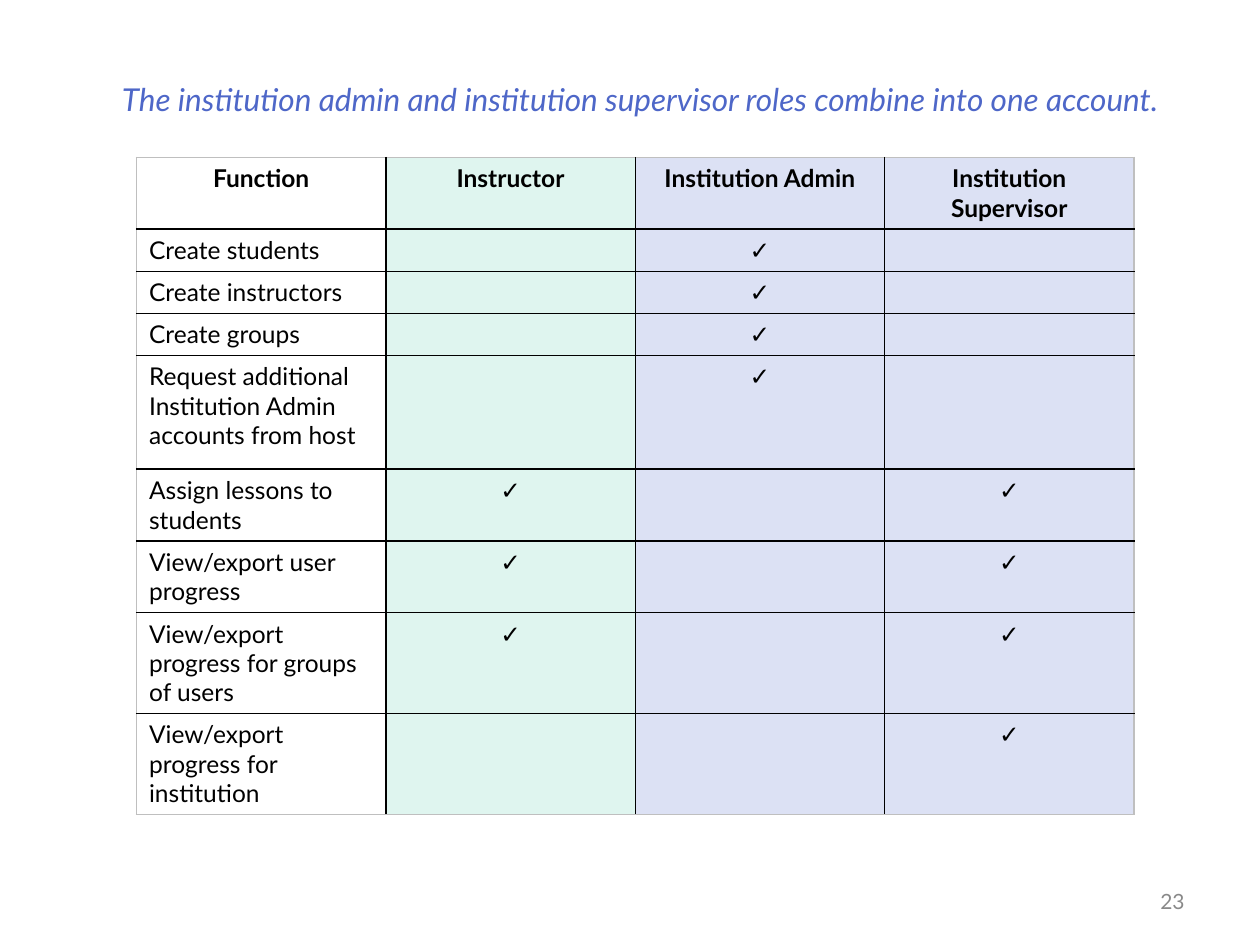
"""Build a slide with a table of account roles and what each may do."""
from dataclasses import dataclass

from lxml.etree import SubElement
from pptx import Presentation
from pptx.dml.color import RGBColor
from pptx.enum.text import MSO_ANCHOR, PP_ALIGN
from pptx.oxml.ns import qn
from pptx.util import Pt


@dataclass(frozen=True)
class Theme:
    font: str = "Lato"
    blue: str = "4E67C8"
    gray: str = "898989"
    edge: str = "BFBFBF"
    black: str = "000000"
    fills: tuple = ("FFFFFF", "DFF5EF", "DCE1F4", "DCE1F4")
    head: int = 18
    body: int = 14
    foot: int = 12


THEME = Theme()
TICK = "✓"
ROWS = [
    ("Function", "Instructor", "Institution Admin", "Institution Supervisor"),
    ("Create students", "", TICK, ""),
    ("Create instructors", "", TICK, ""),
    ("Create groups", "", TICK, ""),
    ("Request additional Institution Admin accounts from host", "", TICK, ""),
    ("Assign lessons to students", TICK, "", TICK),
    ("View/export user progress", TICK, "", TICK),
    ("View/export progress for groups of users", TICK, "", TICK),
    ("View/export progress for institution", "", "", TICK),
]
HEIGHTS = (41, 24, 24, 24, 65, 41, 41, 57.5, 57.5)
WIDTH = 142.5


def style(para, size, color, align, bold=False, italic=False):
    para.alignment = align
    for run in para.runs:
        font = run.font
        font.name, font.size = THEME.font, Pt(size)
        font.bold, font.italic = bold, italic
        font.color.rgb = RGBColor.from_string(color)


def add_label(slide, text, box, size, color, align, anchor, italic=False):
    frame = slide.shapes.add_textbox(*map(Pt, box)).text_frame
    frame.word_wrap = True
    frame.vertical_anchor = anchor
    frame.text = text
    style(frame.paragraphs[0], size, color, align, italic=italic)


def add_line(props, side, color):
    line = SubElement(props, qn(f"a:{side}"), w=str(Pt(1)))
    fill = SubElement(line, qn("a:solidFill"))
    SubElement(fill, qn("a:srgbClr"), val=color)


def fill_cell(cell, text, row, col):
    props = cell._tc.get_or_add_tcPr()
    outer = {"lnL": col == 0, "lnR": col == len(THEME.fills) - 1,
             "lnT": row == 0, "lnB": row == len(ROWS) - 1}
    for side, rim in outer.items():
        add_line(props, side, THEME.edge if rim else THEME.black)
    cell.fill.solid()
    cell.fill.fore_color.rgb = RGBColor.from_string(THEME.fills[col])
    para = cell.text_frame.paragraphs[0]
    if text:
        para.text = text
        align = PP_ALIGN.LEFT if row and not col else PP_ALIGN.CENTER
        style(para, THEME.body, THEME.black, align, bold=row == 0)
    else:
        SubElement(para._p, qn("a:endParaRPr"), sz=str(THEME.body * 100))


def add_grid(slide, left, top):
    cols = len(THEME.fills)
    table = slide.shapes.add_table(
        len(ROWS), cols, Pt(left), Pt(top),
        Pt(WIDTH * cols), Pt(sum(HEIGHTS))).table
    table.first_row = table.horz_banding = False
    for col in table.columns:
        col.width = Pt(WIDTH)
    for row, (texts, height) in enumerate(zip(ROWS, HEIGHTS)):
        table.rows[row].height = Pt(height)
        for col, text in enumerate(texts):
            fill_cell(table.cell(row, col), text, row, col)


def main():
    deck = Presentation()
    deck.slide_width, deck.slide_height = Pt(720), Pt(540)
    slide = deck.slides.add_slide(deck.slide_layouts[6])
    add_label(slide, "The institution admin and institution supervisor roles "
              "combine into one account.", (42, 42, 648, 24), THEME.head,
              THEME.blue, PP_ALIGN.CENTER, MSO_ANCHOR.TOP, italic=True)
    add_grid(slide, 78, 90)
    add_label(slide, "23", (516, 500.5, 168, 28.75), THEME.foot,
              THEME.gray, PP_ALIGN.RIGHT, MSO_ANCHOR.MIDDLE)
    deck.save("out.pptx")


if __name__ == "__main__":
    main()
